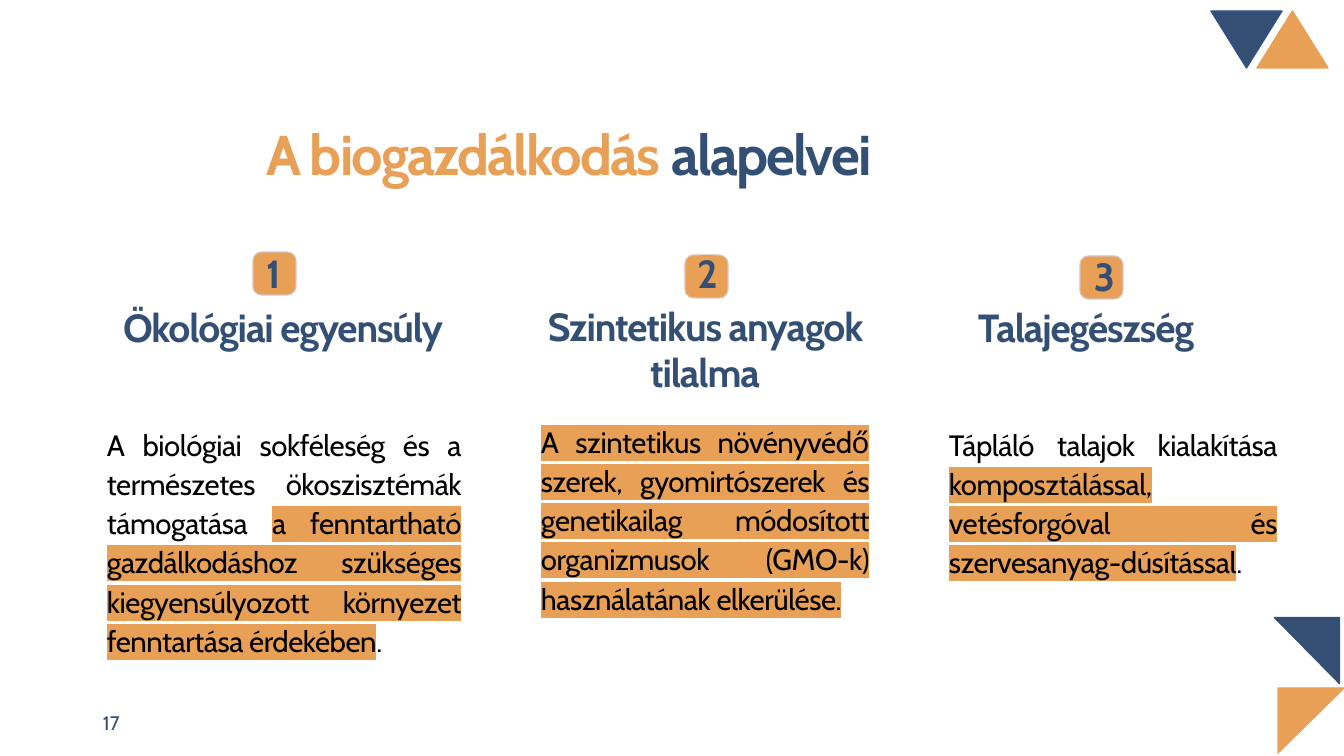
import pptx
import pptx.util
import pptx.dml.color
import pptx.enum.shapes
import pptx.enum.text
import pptx.oxml
import pptx.oxml.ns
from dataclasses import dataclass

Kind = pptx.enum.shapes.MSO_SHAPE
Align = pptx.enum.text.PP_ALIGN
Anchor = pptx.enum.text.MSO_ANCHOR
SCALE = 914400 / 100.8


@dataclass(frozen=True)
class Theme:
    font: str = "Cabin"
    orange: str = "E89F56"
    navy: str = "344F74"
    deep: str = "354F74"
    edge: str = "31538F"
    rim: str = "D7C5C1"
    black: str = "000000"
    title: int = 40
    head: int = 28
    body: int = 21
    page: int = 14


THEME = Theme()

# Each column: box, digit, heading with its inset, width and wrap,
# offsets of chip, digit and body, then (text, highlighted) pieces
COLUMNS = [
    ((97, 252, 374), "1", ("Ökológiai egyensúly", 25, 322, False),
     (156, 0), (169, 3), 166,
     [("A biológiai sokféleség és a természetes ökoszisztémák támogatása ", False),
      ("a fenntartható gazdálkodáshoz szükséges kiegyensúlyozott környezet "
       "fenntartása érdekében", True), (".", False)]),
    ((531, 252, 348), "2", ("Szintetikus anyagok tilalma", 0, 348, True),
     (154, 3), (169, 3), 163,
     [("A szintetikus növényvédő szerek, gyomirtószerek és genetikailag módosított "
       "organizmusok (GMO-k) használatának elkerülése.", True)]),
    ((939, 252, 348), "3", ("Talajegészség", 0, 294, False),
     (141, 4), (158, 6), 166,
     [("Tápláló talajok kialakítása ", False),
      ("komposztálással, vetésforgóval és szervesanyag-dúsítással", True),
      (".", False)]),
]


def px(*nums):
    return [pptx.util.Emu(round(n * SCALE)) for n in nums]


def rgb(code):
    return pptx.dml.color.RGBColor.from_string(code)


def write(shape, runs, size, align=Align.LEFT, lead=None, bold=False,
          track=0, wrap=True, anchor=Anchor.TOP):
    """Fill a shape with runs of (text, colour, highlight)."""
    frame = shape.text_frame
    frame.auto_size = pptx.enum.text.MSO_AUTO_SIZE.NONE
    frame.word_wrap = wrap
    frame.vertical_anchor = anchor
    para = frame.paragraphs[0]
    para.alignment = align
    para.space_before = pptx.util.Pt(0)
    if lead:
        para.line_spacing = pptx.util.Pt(lead)
    for text, color, mark in runs:
        run = para.add_run()
        run.text = text
        font = run.font
        font.size, font.bold, font.name = pptx.util.Pt(size), bold, THEME.font
        font.color.rgb = rgb(color)
        props = run._r.get_or_add_rPr()
        if track:
            props.set("spc", str(round(track * 100)))
        if mark:
            glow = pptx.oxml.parse_xml(
                f'<a:highlight {pptx.oxml.ns.nsdecls("a")}>'
                f'<a:srgbClr val="{mark}"/></a:highlight>')
            props.find(pptx.oxml.ns.qn("a:solidFill")).addnext(glow)


def label(slide, box, runs, size, **style):
    write(slide.shapes.add_textbox(*px(*box)), runs, size, **style)


def draw(slide, kind, box, fill, line=None, width=1, turn=0, bend=None):
    shape = slide.shapes.add_shape(kind, *px(*box))
    shape.shadow.inherit = False
    shape.fill.solid()
    shape.fill.fore_color.rgb = rgb(fill)
    if line:
        shape.line.color.rgb = rgb(line)
        shape.line.width = pptx.util.Pt(width)
    else:
        shape.line.fill.background()
    shape.rotation = turn
    if bend is not None:
        shape.adjustments[0] = bend
    return shape


def corners(slide, box):
    """Triangle pairs at the right corners, and the page number."""
    x, y, w, h = box
    right, foot = x + w, y + h
    t = THEME
    for spot, fill, line, turn, bend in [
        ((right - 87, y + 11, 71, 57), t.orange, t.orange, 0, 0.5),
        ((right - 66, foot - 68, 66, 65), t.orange, t.orange, 180, 1),
        ((right - 70, foot - 138, 66, 65), t.deep, t.deep, 270, 1),
        ((right - 133, y + 11, 71, 57), t.deep, t.edge, 180, 0.5),
    ]:
        draw(slide, Kind.ISOSCELES_TRIANGLE, spot, fill, line, turn=turn, bend=bend)
    label(slide, (x + 93, foot - 53, 302, 40), [("17", t.deep, None)], t.page,
          anchor=Anchor.MIDDLE)


def heading(slide, box):
    title = slide.shapes.title
    title.left, title.top, title.width, title.height = px(*box)
    write(title, [("A biogazdálkodás ", THEME.orange, None),
                  ("alapelvei", THEME.navy, None)],
          THEME.title, align=Align.JUSTIFY, lead=54.7, bold=True, track=-1.3)


def column(slide, box, digit, head, chip, num, drop, pieces):
    """Numbered chip, heading and paragraph of one principle."""
    x, y, w = box
    t = THEME
    text, inset, width, wrap = head
    label(slide, (x + inset, y + 47, width, 92 if wrap else 46),
          [(text, t.navy, None)], t.head, align=Align.CENTER, lead=32.8,
          bold=True, track=-0.8, wrap=wrap)
    label(slide, (x, y + drop, w, 200),
          [(part, t.black, t.orange if mark else None) for part, mark in pieces],
          t.body, align=Align.JUSTIFY, lead=28, track=-0.3)
    draw(slide, Kind.ROUNDED_RECTANGLE, (x + chip[0], y + chip[1], 43, 43),
         t.orange, t.rim, 0.86, bend=0.2)
    plate = draw(slide, Kind.RECTANGLE, (x + num[0], y + num[1], 15, 36), t.orange)
    write(plate, [(digit, t.navy, None)], t.head, align=Align.CENTER, lead=26,
          bold=True, wrap=False)


def main():
    deck = pptx.Presentation()
    deck.slide_width, deck.slide_height = px(1344, 756)
    slide = deck.slides.add_slide(deck.slide_layouts.get_by_name("Title Only"))
    corners(slide, (0, 0, 1344, 756))
    heading(slide, (256, 105, 832, 77))
    for parts in COLUMNS:
        column(slide, *parts)
    deck.save("out.pptx")


if __name__ == "__main__":
    main()
